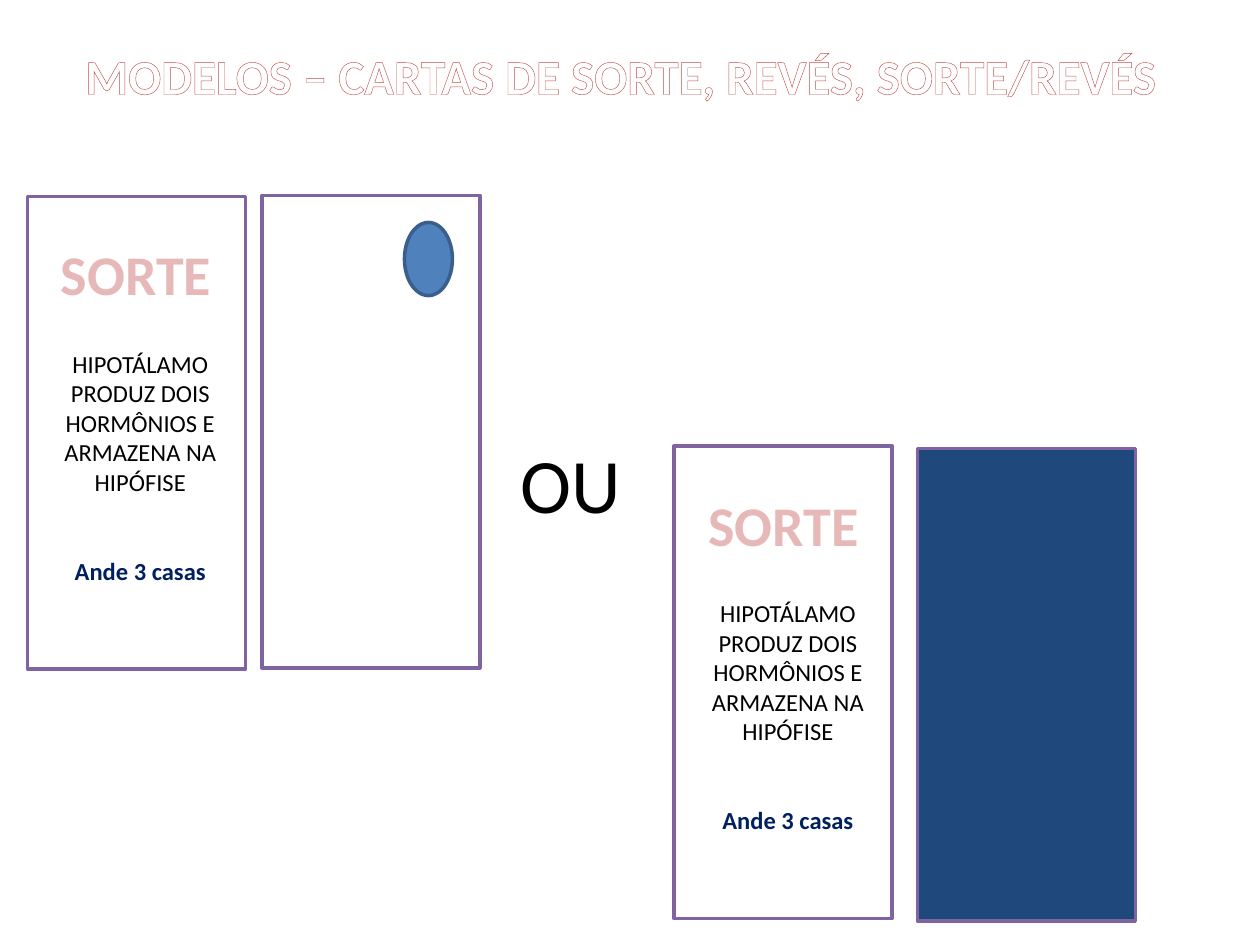
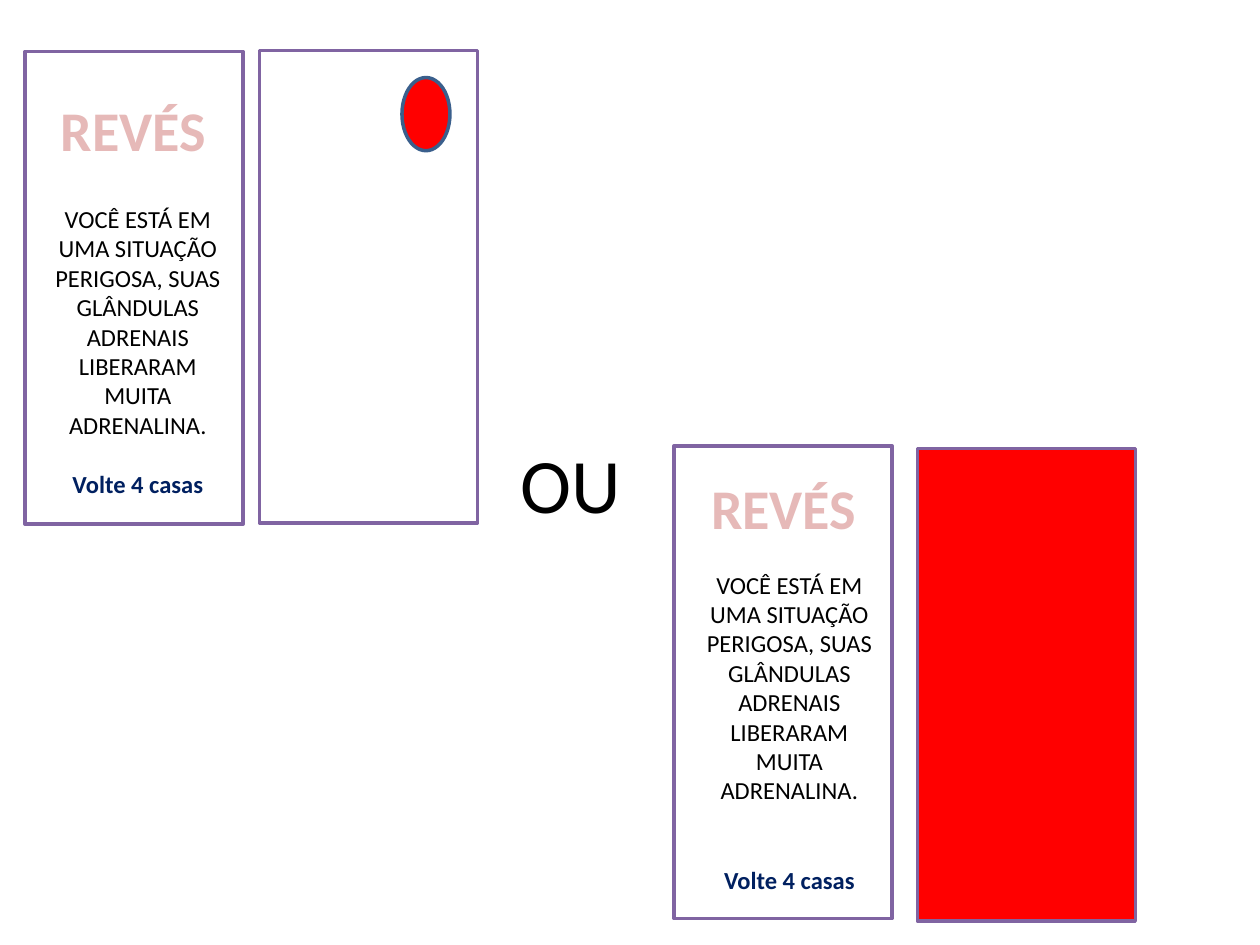
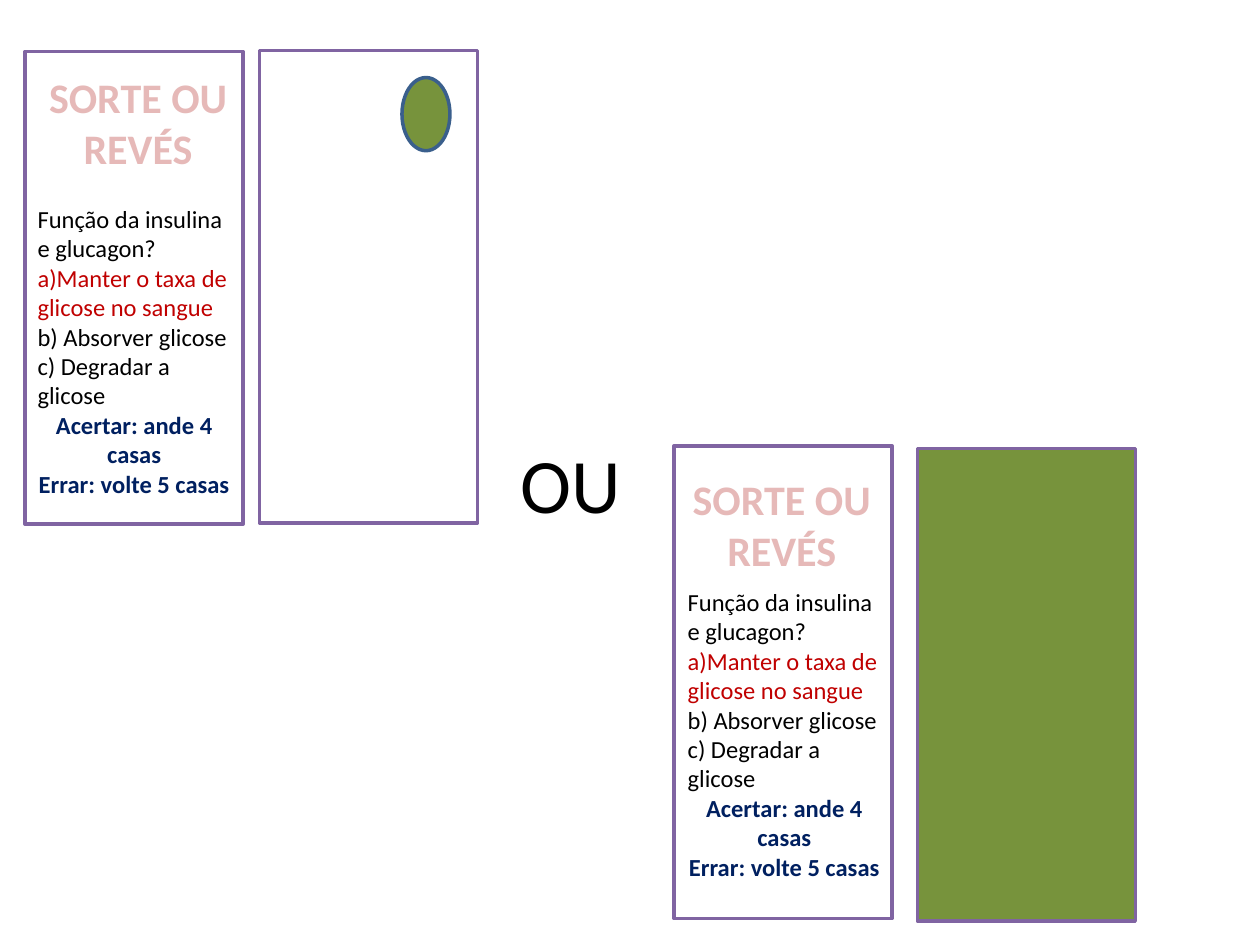
from lxml import etree
from pptx import Presentation
from pptx.dml.color import RGBColor
from pptx.enum import shapes, text
from pptx.oxml import ns
from pptx.util import Pt

WHITE = RGBColor(0xFF, 0xFF, 0xFF)
BLACK = RGBColor(0, 0, 0)
PURPLE = RGBColor(0x80, 0x64, 0xA2)
PINK = RGBColor(0xE6, 0xB9, 0xB8)
OUTLINE = RGBColor(0xC0, 0x50, 0x4D)
NAVY = RGBColor(0x00, 0x20, 0x60)
CRIMSON = RGBColor(0xC0, 0, 0)
BLUE = RGBColor(0x4F, 0x81, 0xBD)
DARK_BLUE = RGBColor(0x1F, 0x49, 0x7D)
RED = RGBColor(0xFF, 0, 0)
GREEN = RGBColor(0x77, 0x93, 0x3C)
SPOT_EDGE = RGBColor(0x3A, 0x5F, 0x8C)
LEFT, CENTER = text.PP_ALIGN.LEFT, text.PP_ALIGN.CENTER

CARD_W, CARD_H = 124.6, 270
LINE_H = 17.1  # one line of 14 pt text
SECOND_CARD = (385.2, 254.9)
TITLE = "MODELOS – CARTAS DE SORTE, REVÉS, SORTE/REVÉS"


def add_panel(slide, kind, box, fill, edge):
    panel = slide.shapes.add_shape(kind, *map(Pt, box))
    panel.shadow.inherit = False
    panel.fill.solid()
    panel.fill.fore_color.rgb = fill
    panel.line.color.rgb = edge
    panel.line.width = Pt(2)


def write(holder, lines, size, outline=0, wrap=True):
    """Fill holder with (text, colour, bold, alignment, lines of space before)."""
    frame = holder.text_frame
    frame.word_wrap = wrap
    frame.auto_size = text.MSO_AUTO_SIZE.SHAPE_TO_FIT_TEXT
    for i, (words, colour, bold, align, gap) in enumerate(lines):
        paragraph = frame.add_paragraph() if i else frame.paragraphs[0]
        run = paragraph.add_run()
        run.text = words
        paragraph.alignment = align
        paragraph.space_before = Pt(gap * LINE_H)
        font = paragraph.font
        font.name, font.size, font.bold = "Calibri", Pt(size), bold
        font.color.rgb = colour
        if outline:
            edge = etree.Element(ns.qn("a:ln"), w=str(Pt(outline)))
            fill = etree.SubElement(edge, ns.qn("a:solidFill"))
            etree.SubElement(fill, ns.qn("a:srgbClr"), val=str(OUTLINE))
            run._r.get_or_add_rPr().insert(0, edge)


# Each placement: heading offset, body offset, body height, gap before the order
decks = [
    dict(title=TITLE, first_card=(15.8, 112.3), spot=BLUE, back=DARK_BLUE,
         heading="SORTE", heading_size=32, heading_box=(110.9, 46), body_w=113,
         body=[("HIPOTÁLAMO PRODUZ DOIS HORMÔNIOS E ARMAZENA NA HIPÓFISE",
                BLACK, False, CENTER)],
         orders=["Ande 3 casas"],
         placements=[((6.5, 20.9), (7.9, 83.5), 143.3, 2),
                     ((7.2, 21.6), (8.6, 83.5), 143.3, 2)]),
    dict(title=None, first_card=(14.4, 29.5), spot=RED, back=RED,
         heading="REVÉS", heading_size=32, heading_box=(110.9, 46), body_w=113,
         body=[("VOCÊ ESTÁ EM UMA SITUAÇÃO PERIGOSA, SUAS GLÂNDULAS ADRENAIS "
                "LIBERARAM MUITA ADRENALINA.", BLACK, False, CENTER)],
         orders=["Volte 4 casas"],
         placements=[((6.5, 21.6), (7.9, 83.5), 177, 1),
                     ((7.2, 12.2), (9.4, 67), 193.7, 2)]),
    dict(title=None, first_card=(14.4, 29.5), spot=GREEN, back=GREEN,
         heading="SORTE OU REVÉS", heading_size=24, heading_box=(131.8, 65.5),
         body_w=CARD_W,
         body=[("Função da insulina e glucagon?", BLACK, False, LEFT),
               ("a)Manter o taxa de glicose no sangue", CRIMSON, False, LEFT),
               ("b) Absorver glicose", BLACK, False, LEFT),
               ("c) Degradar a glicose", BLACK, False, LEFT)],
         orders=["Acertar: ande 4 casas", "Errar: volte 5 casas"],
         placements=[((-1.4, 7.9), (0, 83.5), 177, 0),
                     ((-4.4, 12.2), (0.7, 77), 177, 0)]),
]

prs = Presentation()
prs.slide_width, prs.slide_height = Pt(720), Pt(540)
TITLE_ONLY, BLANK = prs.slide_layouts[5], prs.slide_layouts[6]
RECT, OVAL = shapes.MSO_SHAPE.RECTANGLE, shapes.MSO_SHAPE.OVAL

for deck in decks:
    slide = prs.slides.add_slide(TITLE_ONLY if deck["title"] else BLANK)
    if deck["title"]:
        title = slide.shapes.title
        title.left, title.top, title.width, title.height = map(Pt, (38.2, 22.3, 632.9, 41))
        write(title, [(deck["title"], WHITE, True, CENTER, 0)], 28, outline=0.52, wrap=False)

    x, y = deck["first_card"]
    add_panel(slide, RECT, (x + 133.9, y - 0.7, CARD_W, CARD_H), WHITE, PURPLE)
    add_panel(slide, OVAL, (x + 215.3, y + 14.8, 27.4, 41.8), deck["spot"], SPOT_EDGE)
    add_panel(slide, RECT, (524.2, 256.3, CARD_W, CARD_H), deck["back"], PURPLE)

    for (x, y), placement in zip((deck["first_card"], SECOND_CARD), deck["placements"]):
        (heading_dx, heading_dy), (body_dx, body_dy), body_h, gap = placement
        add_panel(slide, RECT, (x, y, CARD_W, CARD_H), WHITE, PURPLE)
        heading = slide.shapes.add_textbox(
            Pt(x + heading_dx), Pt(y + heading_dy), *map(Pt, deck["heading_box"]))
        write(heading, [(deck["heading"], PINK, True, CENTER, 0)],
              deck["heading_size"], outline=1.75)
        body = slide.shapes.add_textbox(
            Pt(x + body_dx), Pt(y + body_dy), Pt(deck["body_w"]), Pt(body_h))
        lines = [(*line, 0) for line in deck["body"]]
        lines += [(order, NAVY, True, CENTER, gap) for order in deck["orders"]]
        write(body, lines, 14)

    either = slide.shapes.add_textbox(Pt(290.2), Pt(246.2), Pt(73.4), Pt(60.5))
    write(either, [("OU", BLACK, False, LEFT, 0)], 44)

prs.save("out.pptx")
